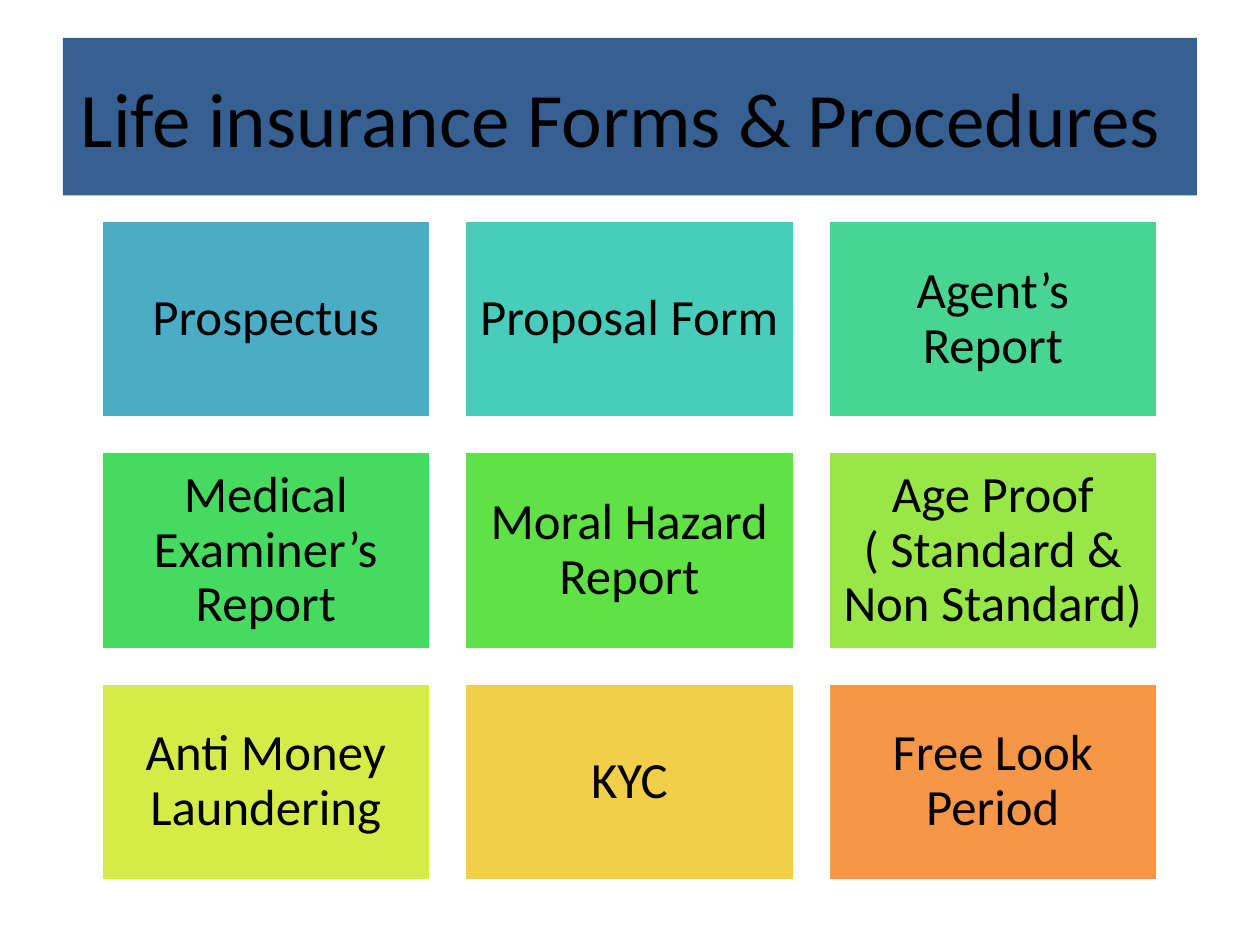
from pptx import Presentation
from pptx.dml.color import RGBColor
from pptx.enum.shapes import MSO_SHAPE as Shape
from pptx.enum.text import MSO_ANCHOR as Anchor, PP_ALIGN as Align
from pptx.util import Inches, Pt

TITLE = "Life insurance Forms & Procedures "
FORMS = [
    ("Prospectus", "4BACC6"),
    ("Proposal Form ", "49CDBB"),
    ("Agent’s Report", "48D491"),
    ("Medical Examiner’s Report", "47DA61"),
    ("Moral Hazard Report", "60E146"),
    ("Age Proof ( Standard & Non Standard)", "98E746"),
    ("Anti Money Laundering", "D5EC46"),
    ("KYC", "F2CF46"),
    ("Free Look Period", "F79646"),
]
COLS = 3
LEFT, TOP = 0.8, 1.75
WIDE, HIGH = 2.62, 1.57
GAP = 0.265


def color(code):
    return RGBColor.from_string(code)


class Deck:
    font = "Calibri"
    ink = "000000"
    edge = "FFFFFF"

    def __init__(self, slide):
        self.slide = slide

    def box(self, text, fill, x, y, w, h, size):
        """Add a filled rectangle with centred text."""
        box = self.slide.shapes.add_shape(
            Shape.RECTANGLE, Inches(x), Inches(y), Inches(w), Inches(h))
        box.shadow.inherit = False
        box.fill.solid()
        box.fill.fore_color.rgb = color(fill)
        box.line.fill.background()
        frame = box.text_frame
        frame.word_wrap = True
        frame.vertical_anchor = Anchor.MIDDLE
        frame.text = text
        para = frame.paragraphs[0]
        para.alignment = Align.CENTER
        font = para.runs[0].font
        font.name = self.font
        font.size = Pt(size)
        font.color.rgb = color(self.ink)
        return box

    def title(self, text):
        self.box(text, "376092", 0.5, 0.3, 9, 1.25, 44)

    def tile(self, text, fill, x, y):
        tile = self.box(text, fill, x, y, WIDE, HIGH, 29)
        tile.line.color.rgb = color(self.edge)
        tile.line.width = Pt(2)
        frame = tile.text_frame
        frame.margin_left = frame.margin_right = Inches(0.12)
        frame.margin_top = frame.margin_bottom = Inches(0.12)
        frame.paragraphs[0].line_spacing = 0.9


def main():
    show = Presentation()
    show.slide_width, show.slide_height = Inches(10), Inches(7.5)
    deck = Deck(show.slides.add_slide(show.slide_layouts[6]))
    deck.title(TITLE)
    for i, (text, fill) in enumerate(FORMS):
        row, col = divmod(i, COLS)
        deck.tile(text, fill, LEFT + col * (WIDE + GAP), TOP + row * (HIGH + GAP))
    show.save("out.pptx")


if __name__ == "__main__":
    main()
